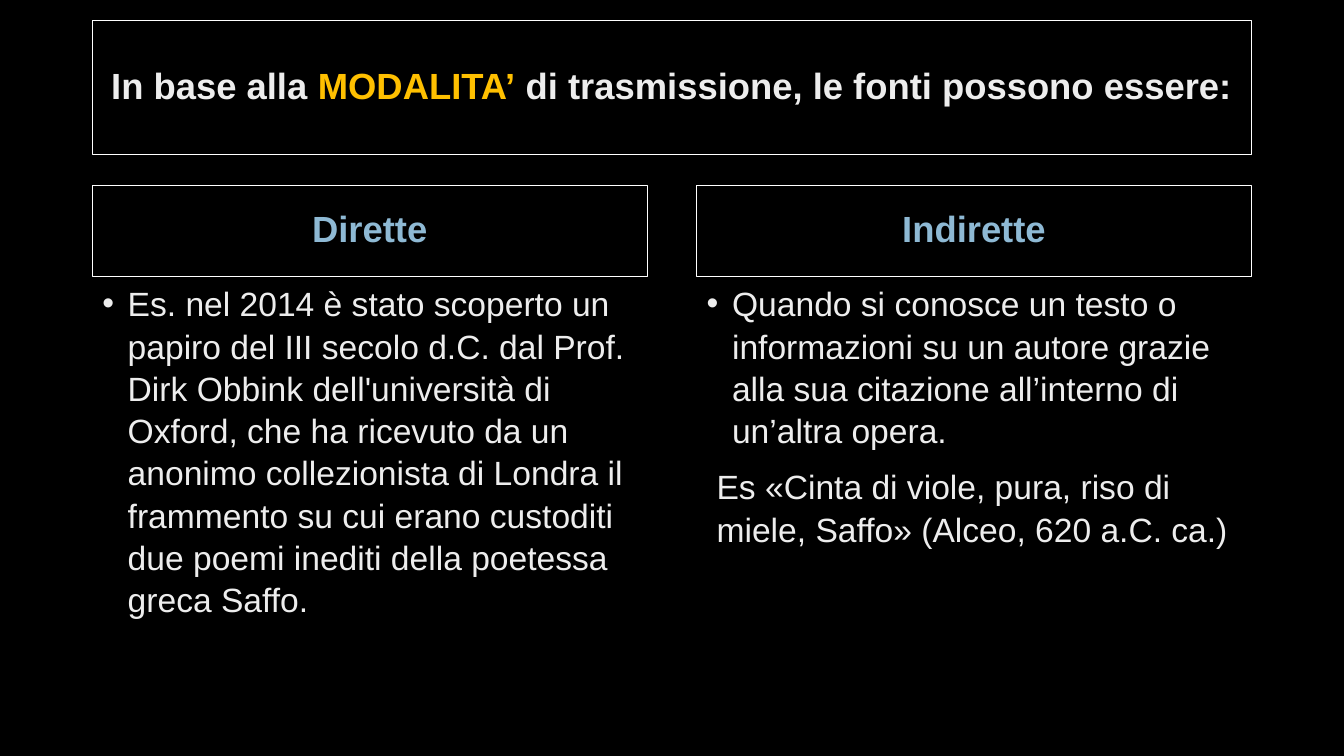
import pptx
import pptx.dml.color
import pptx.enum.text
import pptx.oxml
import pptx.oxml.ns
import pptx.util

Cm = pptx.util.Cm
Pt = pptx.util.Pt
Align = pptx.enum.text.PP_ALIGN
Anchor = pptx.enum.text.MSO_ANCHOR

LEFT, WIDTH = 2.33, 29.21
COLUMN_WIDTH = 13.98
COLUMNS = [
    ("Dirette", [
        ("Es. nel 2014 è stato scoperto un papiro del III secolo d.C. dal Prof. "
         "Dirk Obbink dell'università di Oxford, che ha ricevuto da un anonimo "
         "collezionista di Londra il frammento su cui erano custoditi due poemi "
         "inediti della poetessa greca Saffo.", True),
    ]),
    ("Indirette", [
        ("Quando si conosce un testo o informazioni su un autore grazie alla sua "
         "citazione all’interno di un’altra opera.", True),
        ("Es «Cinta di viole, pura, riso di miele, Saffo» (Alceo, 620 a.C. ca.)", False),
    ]),
]


def colour(value):
    return pptx.dml.color.RGBColor.from_string(value)


class SlideBuilder:
    TEXT, ACCENT, HEADING = "EDEDED", "FFC000", "8EB9D4"
    BACKGROUND, BORDER = "000000", "FFFFFF"

    def __init__(self, presentation):
        self.slide = presentation.slides.add_slide(presentation.slide_layouts[5])
        fill = self.slide.background.fill
        fill.solid()
        fill.fore_color.rgb = colour(self.BACKGROUND)

    def apply(self, target, values):
        for name, value in values.items():
            setattr(target, name, value)

    def place(self, shape, left, top, width, height, anchor):
        self.apply(shape, {"left": Cm(left), "top": Cm(top),
                           "width": Cm(width), "height": Cm(height)})
        self.apply(shape.text_frame, {
            "word_wrap": True, "vertical_anchor": anchor,
            "auto_size": pptx.enum.text.MSO_AUTO_SIZE.NONE})

    def text_box(self, left, top, width, height, anchor):
        shape = self.slide.shapes.add_textbox(0, 0, 0, 0)
        self.place(shape, left, top, width, height, anchor)
        return shape

    def styled_run(self, paragraph, text, size, text_colour, bold=False):
        run = paragraph.add_run()
        run.text = text
        self.apply(run.font, {"name": "Arial", "size": Pt(size), "bold": bold})
        run.font.color.rgb = colour(text_colour)

    def framed_line(self, shape, runs):
        shape.line.color.rgb = colour(self.BORDER)
        shape.line.width = Pt(0.75)
        paragraph = shape.text_frame.paragraphs[0]
        self.apply(paragraph, {"alignment": Align.CENTER, "line_spacing": 0.9})
        for text, text_colour in runs:
            self.styled_run(paragraph, text, 26, text_colour, True)

    def title(self, runs, *box):
        shape = self.slide.shapes.title
        self.place(shape, *box, Anchor.MIDDLE)
        self.framed_line(shape, runs)

    def heading(self, text, *box):
        self.framed_line(self.text_box(*box, Anchor.MIDDLE), [(text, self.HEADING)])

    def body(self, items, *box):
        frame = self.text_box(*box, Anchor.TOP).text_frame
        for index, (text, bulleted) in enumerate(items):
            paragraph = frame.add_paragraph() if index else frame.paragraphs[0]
            self.indent(paragraph, bulleted)
            self.apply(paragraph, {"line_spacing": 1.05,
                                   "space_before": Pt(10 if index else 0)})
            self.styled_run(paragraph, text, 24, self.TEXT)

    def indent(self, paragraph, bulleted):
        properties = paragraph._p.get_or_add_pPr()
        properties.set("marL", str(Cm(0.64 if bulleted else 0.25)))
        properties.set("indent", str(Cm(-0.64 if bulleted else 0)))
        if bulleted:
            namespace = pptx.oxml.ns.nsdecls("a")
            for element in (f'<a:buFont {namespace} typeface="Arial"/>',
                            f'<a:buChar {namespace} char="•"/>'):
                properties.append(pptx.oxml.parse_xml(element))


def main():
    presentation = pptx.Presentation()
    presentation.slide_width = Cm(33.87)
    presentation.slide_height = Cm(19.05)
    builder = SlideBuilder(presentation)
    builder.title([
        ("In base alla ", builder.TEXT),
        ("MODALITA’", builder.ACCENT),
        (" di trasmissione, le fonti possono essere:", builder.TEXT),
    ], LEFT, 0.51, WIDTH, 3.38)
    for index, (heading, items) in enumerate(COLUMNS):
        left = LEFT + index * (WIDTH - COLUMN_WIDTH)
        builder.heading(heading, left, 4.67, COLUMN_WIDTH, 2.29)
        builder.body(items, left, 6.96, COLUMN_WIDTH, 10.24)
    presentation.save("out.pptx")


if __name__ == "__main__":
    main()
